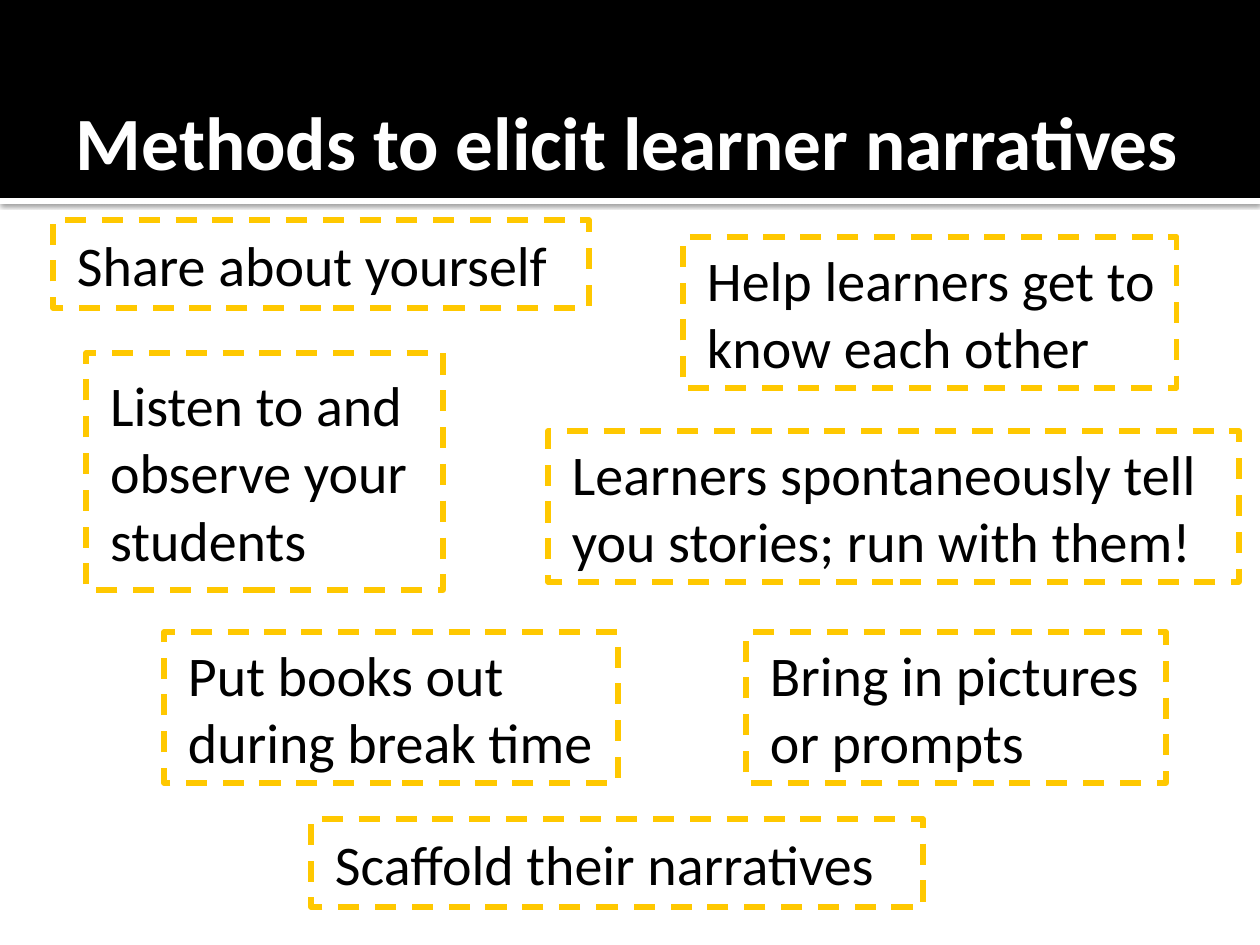
"""Build a slide of dashed cards listing methods to elicit learner narratives."""
from dataclasses import dataclass

from lxml import etree
from pptx import Presentation
from pptx.dml.color import RGBColor
from pptx.enum.dml import MSO_LINE
from pptx.enum.shapes import MSO_SHAPE
from pptx.enum.text import MSO_ANCHOR, MSO_AUTO_SIZE, PP_ALIGN
from pptx.oxml import parse_xml
from pptx.oxml.ns import nsdecls, qn
from pptx.shapes.autoshape import Shape
from pptx.slide import Slide
from pptx.util import Emu, Pt

PX_PER_INCH = 126
SLIDE_WIDTH, SLIDE_HEIGHT = 1260, 945
TITLE_ONLY = 5
FONT = "Calibri"
BLACK = RGBColor(0x00, 0x00, 0x00)
WHITE = RGBColor(0xFF, 0xFF, 0xFF)
AMBER = RGBColor(0xFF, 0xC8, 0x00)
RECTANGLE = MSO_SHAPE.RECTANGLE
DASH = MSO_LINE.DASH
BOTTOM, MIDDLE = MSO_ANCHOR.BOTTOM, MSO_ANCHOR.MIDDLE
LEFT = PP_ALIGN.LEFT
NO_AUTOFIT = MSO_AUTO_SIZE.NONE
TEXT_INSET, TEXT_INDENT = 13, 11
BAND_HEIGHT, STRIP_HEIGHT = 198, 6


@dataclass(frozen=True)
class Box:
    left: int
    top: int
    width: int
    height: int


@dataclass(frozen=True)
class Card:
    text: str
    box: Box


HEADER_BAND = Box(0, 0, SLIDE_WIDTH, BAND_HEIGHT)
HEADER_STRIP = Box(0, BAND_HEIGHT, SLIDE_WIDTH, STRIP_HEIGHT)
TITLE_BOX = Box(63, 38, 1176, 161)
CARDS = [
    Card("Share about yourself", Box(53, 220, 536, 88)),
    Card("Bring in pictures or prompts", Box(746, 632, 420, 151)),
    Card("Listen to and observe your students", Box(86, 353, 357, 237)),
    Card("Put books out during break time", Box(164, 632, 454, 151)),
    Card("Scaffold their narratives", Box(311, 819, 612, 88)),
    Card("Help learners get to know each other", Box(683, 237, 494, 151)),
    Card("Learners spontaneously tell you stories; run with them!",
         Box(548, 431, 691, 151)),
]


def px(length: int) -> Emu:
    """Turn whole pixels into EMU."""
    return Emu(round(length * 914400 / PX_PER_INCH))


def add_rectangle(slide: Slide, box: Box, fill: RGBColor) -> Shape:
    """Add a plain filled rectangle without line or shadow."""
    shape = slide.shapes.add_shape(
        RECTANGLE, px(box.left), px(box.top), px(box.width), px(box.height))
    shape.shadow.inherit = False
    shape.fill.solid()
    shape.fill.fore_color.rgb = fill
    shape.line.fill.background()
    return shape


def add_soft_shadow(shape: Shape) -> None:
    """Give a shape a soft shadow falling straight down."""
    effects = shape.shadow._element.find(qn("a:effectLst"))
    shadow = parse_xml(
        f'<a:outerShdw {nsdecls("a")} blurRad="{Pt(2.5)}" dist="{Pt(0.8)}" '
        'dir="5400000" algn="tl" rotWithShape="0"/>')
    color = etree.SubElement(shadow, qn("a:srgbClr"), val=str(BLACK))
    etree.SubElement(color, qn("a:alpha"), val="60000")
    effects.append(shadow)


def write_text(shape: Shape, text: str, size: int, color: RGBColor,
               anchor: MSO_ANCHOR, bold: bool = False) -> None:
    """Set and format the single left-aligned paragraph of a shape."""
    frame = shape.text_frame
    frame.text = text
    frame.word_wrap = True
    frame.auto_size = NO_AUTOFIT
    frame.vertical_anchor = anchor
    frame.margin_left = frame.margin_right = px(TEXT_INSET)
    frame.margin_top = frame.margin_bottom = px(TEXT_INSET)
    paragraph = frame.paragraphs[0]
    paragraph.alignment = LEFT
    font = paragraph.runs[0].font
    font.name, font.size, font.bold = FONT, Pt(size), bold
    font.color.rgb = color


def place_title(slide: Slide, text: str) -> None:
    """Move the title placeholder in front of the header and fill it."""
    title = slide.shapes.title
    title.left, title.top = px(TITLE_BOX.left), px(TITLE_BOX.top)
    title.width, title.height = px(TITLE_BOX.width), px(TITLE_BOX.height)
    write_text(title, text, 43, WHITE, BOTTOM, bold=True)
    slide.shapes._spTree.append(title._element)


def add_card(slide: Slide, card: Card) -> None:
    """Add a white card with a dashed amber outline."""
    shape = add_rectangle(slide, card.box, WHITE)
    shape.line.color.rgb = AMBER
    shape.line.width = Pt(3)
    shape.line.dash_style = DASH
    write_text(shape, card.text, 32, BLACK, MIDDLE)
    properties = shape.text_frame.paragraphs[0]._p.get_or_add_pPr()
    properties.set("marL", str(px(TEXT_INDENT)))


def main() -> None:
    """Build and save the presentation."""
    presentation = Presentation()
    presentation.slide_width = px(SLIDE_WIDTH)
    presentation.slide_height = px(SLIDE_HEIGHT)
    slide = presentation.slides.add_slide(presentation.slide_layouts[TITLE_ONLY])
    add_soft_shadow(add_rectangle(slide, HEADER_STRIP, WHITE))
    add_rectangle(slide, HEADER_BAND, BLACK)
    place_title(slide, "Methods to elicit learner narratives")
    for card in CARDS:
        add_card(slide, card)
    presentation.save("out.pptx")


if __name__ == "__main__":
    main()
